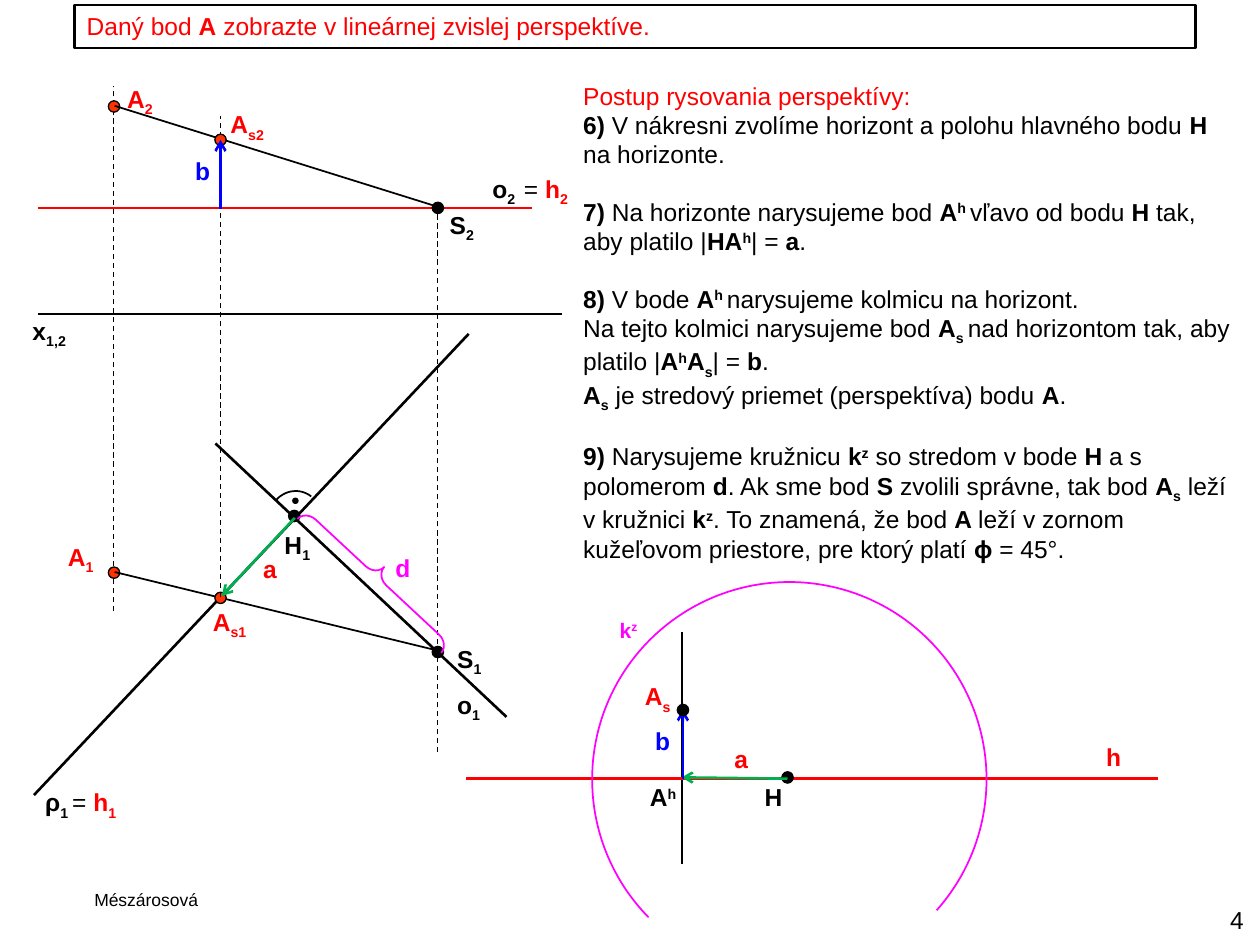
from dataclasses import dataclass
from typing import Any

from lxml import etree
from pptx import Presentation
from pptx.dml.color import RGBColor
from pptx.enum.dml import MSO_LINE
from pptx.enum.shapes import MSO_CONNECTOR, MSO_SHAPE
from pptx.enum.text import MSO_ANCHOR, MSO_AUTO_SIZE, PP_ALIGN
from pptx.oxml.ns import qn
from pptx.util import Inches, Pt

DASH = MSO_LINE.DASH
STRAIGHT = MSO_CONNECTOR.STRAIGHT
ELLIPSE, ARC, BRACE, RECTANGLE = (
    MSO_SHAPE.OVAL, MSO_SHAPE.ARC, MSO_SHAPE.LEFT_BRACE, MSO_SHAPE.RECTANGLE)
TOP, MIDDLE = MSO_ANCHOR.TOP, MSO_ANCHOR.MIDDLE
LEFT, RIGHT = PP_ALIGN.LEFT, PP_ALIGN.RIGHT
FIT = MSO_AUTO_SIZE.SHAPE_TO_FIT_TEXT

WIDTH, HEIGHT = Inches(10), Inches(7.5)
COLUMNS, ROWS = 100, 75
BLACK, RED, BLUE, GREEN, PINK, ORANGE = (
    "000000", "FF0000", "0000FF", "00B050", "FF00FF", "FF3300")
DOT_SIZE = 0.9
BASELINES = {"_": "-25000", "^": "30000"}


@dataclass(frozen=True)
class Segment:
    """A straight line; an arrow has its head at the start."""
    start: tuple[float, float]
    end: tuple[float, float]
    color: str = BLACK
    weight: float = 1
    dashed: bool = False
    arrow: bool = False


@dataclass(frozen=True)
class Dot:
    """A marked point, placed by its centre."""
    column: float
    row: float
    color: str = BLACK
    size: float = DOT_SIZE
    weight: float = 0.75


@dataclass(frozen=True)
class Outline:
    """An unfilled preset shape."""
    preset: Any
    box: tuple[float, float, float, float]
    adjustments: tuple[float, ...] = ()
    rotation: float = 0


@dataclass(frozen=True)
class Label:
    """Text where * toggles bold, ~ red, _ subscript and ^ superscript."""
    text: str
    box: tuple[float, float, float, float]
    color: str = BLACK
    size: float = 14
    wrap: bool = False
    align: Any = LEFT
    anchor: Any = TOP


DRAWING = (
    Segment((54.1, 50.2), (54.1, 68.6)),
    Segment((44.6, 24.9), (3, 24.9)),
    Segment((9, 48.5), (9, 6.8), weight=0.75, dashed=True),
    Segment((17.1, 35.2), (40.2, 56.9), weight=1.5),
    Segment((42.2, 16.5), (3, 16.5), RED, 1.5),
    Dot(34.75, 16.5),
    Dot(9.05, 8.45, ORANGE),
    Segment((34.7, 59.7), (34.7, 16.5), weight=0.75, dashed=True),
    Segment((2.7, 63.1), (37.2, 26.5), weight=1.5),
    Dot(23.35, 40.95),
    Dot(9.05, 45.45, ORANGE),
    Dot(34.75, 51.75),
    Segment((35, 51.7), (9.1, 45.4)),
    Dot(17.5, 47.45, ORANGE),
    Segment((34.7, 16.4), (9.1, 8.4)),
    Segment((17.5, 47.4), (17.5, 9.2), weight=0.75, dashed=True),
    Segment((91.9, 61.8), (37, 61.8), RED, 1.5),
    Dot(62.5, 61.7),
    Segment((17.6, 47.3), (23.4, 41.1), GREEN, 1.5, arrow=True),
    Segment((54.1, 61.7), (62.5, 61.8), GREEN, 1.5, arrow=True),
    Segment((54.2, 56.3), (54.2, 61.8), BLUE, 1.5, arrow=True),
    Outline(ARC, (47, 46.2, 31.3, 31.3), (81.33, 24.99)),
    Dot(54.2, 56.35),
    Outline(BRACE, (29, 38, 1.9, 15.6), (0.59, 0.51), 133),
    Dot(17.5, 11.1, ORANGE),
    Segment((17.5, 11.1), (17.5, 16.6), BLUE, 1.5, arrow=True),
    Dot(23.45, 39.75, size=0.3, weight=1.5),
)
RIGHT_ANGLE = ((21.9, 39.7), (22.6, 38.9), (23.8, 38.7), (24.7, 39.4))
TITLE = Label("Daný bod *A* zobrazte v lineárnej zvislej perspektíve.",
              (5.9, 0.4, 89, 3.4), RED, wrap=True)
LABELS = (
    Label("*A_2", (9.1, 6.2, 4.2, 3.4), RED),
    Label("*A_1", (4.4, 42.5, 4.2, 3.4), RED),
    Label("*x_1,2", (1.6, 24.6, 5, 3.4), wrap=True),
    Label("*o_1", (35.3, 54.3, 4.3, 3.7)),
    Label("*S_1", (35.3, 50.6, 4.5, 3.7)),
    Label("*o_2", (38.1, 13.3, 4.3, 3.7)),
    Label("*S_2", (34.7, 16.2, 4.5, 3.7)),
    Label("*H_1", (21.6, 41.6, 4.6, 3.7)),
    Label("= ~*h_2", (40.6, 13.3, 5.6, 3.4)),
    Label("*A_s1", (15.9, 47.7, 4.9, 3.4), RED),
    Label("*A_s2", (17.3, 8.2, 4.9, 3.4), RED),
    Label("*b", (14.5, 11.9, 3.2, 3.4), BLUE),
    Label("*a", (19.9, 43.5, 3.1, 3.4), RED),
    Label("*H", (59.7, 61.6, 3.8, 3.7)),
    Label("*h", (86.8, 58.4, 3.2, 3.4), RED),
    Label("*a", (57.3, 58.6, 3.1, 3.4), RED),
    Label("*b", (51, 57.1, 3.2, 3.4), BLUE),
    Label("*A^h", (50.6, 61.6, 4.2, 3.4)),
    Label("*k^z", (48.2, 48.5, 3.5, 3), PINK, 12),
    Label("*A_s", (50.2, 53.6, 4.2, 3.4), RED),
    Label("*d", (30.4, 43.4, 3.2, 3.4), PINK),
    Label("*ρ_1 _*= ~*h_1", (2.6, 62, 8, 3.4)),
    Label("Mészárosová", (6.5, 70.1, 10.3, 2.7), size=10),
    Label("4", (95.3, 71.3, 4.4, 3.4), align=RIGHT, anchor=MIDDLE),
)
PROCEDURE = Label(
    "~Postup rysovania perspektívy:\n"
    "*6) *V nákresni zvolíme horizont a polohu hlavného bodu *H* na horizonte.\n"
    "*7) *Na horizonte narysujeme bod *A^h ^*vľavo od bodu *H *tak, "
    "aby platilo |*HA^h^*| = *a*.\n"
    "*8) *V bode *A^h ^*narysujeme kolmicu na horizont.\n"
    "Na tejto kolmici narysujeme bod *A_s _*nad horizontom tak, aby\n"
    "platilo |*A^h^A_s_*| = *b*.\n"
    "*A_s_* je stredový priemet (perspektíva) bodu *A*.\n"
    "*9) *Narysujeme kružnicu *k^z^* so stredom v bode *H *a s polomerom *d*. "
    "Ak sme bod *S *zvolili správne, tak bod *A_s_* leží v kružnici *k^z^*. "
    "To znamená, že bod *A *leží v zornom\n"
    "kužeľovom priestore, pre ktorý platí *ϕ *= 45°.",
    (45.3, 5.9, 53.5, 38.7), wrap=True)
STEP_STARTS = ("*7)", "*8)", "*9)")


def rgb(color: str) -> RGBColor:
    """Turn a hex string into a colour."""
    return RGBColor.from_string(color)


def place(*lengths: float) -> list[int]:
    """Turn alternating columns and rows into slide lengths."""
    units = (WIDTH / COLUMNS, HEIGHT / ROWS)
    return [round(length * units[index % 2]) for index, length in enumerate(lengths)]


def apply_format(target: Any, values: dict[str, Any]) -> None:
    """Set every named value on the target."""
    for name, value in values.items():
        setattr(target, name, value)


def style_line(shape: Any, color: str, weight: float) -> None:
    """Give a shape its line colour and width."""
    shape.line.color.rgb = rgb(color)
    shape.line.width = Pt(weight)


def draw_segment(slide: Any, segment: Segment) -> None:
    """Draw a line, dashed or with an arrowhead if asked."""
    connector = slide.shapes.add_connector(STRAIGHT, *place(*segment.start, *segment.end))
    style_line(connector, segment.color, segment.weight)
    if segment.dashed:
        connector.line.dash_style = DASH
    if segment.arrow:
        etree.SubElement(connector.line._get_or_add_ln(), qn("a:headEnd"), type="arrow")
    etree.SubElement(connector._element.spPr, qn("a:effectLst"))


def draw_dot(slide: Any, dot: Dot) -> None:
    """Draw a filled circle around its centre."""
    half = dot.size / 2
    box = place(dot.column - half, dot.row - half, dot.size, dot.size)
    shape = slide.shapes.add_shape(ELLIPSE, *box)
    shape.shadow.inherit = False
    shape.fill.solid()
    shape.fill.fore_color.rgb = rgb(dot.color)
    style_line(shape, BLACK, dot.weight)


def draw_outline(slide: Any, outline: Outline) -> None:
    """Draw an unfilled pink shape."""
    shape = slide.shapes.add_shape(outline.preset, *place(*outline.box))
    for index, value in enumerate(outline.adjustments):
        shape.adjustments[index] = value
    apply_format(shape, {"rotation": outline.rotation})
    shape.shadow.inherit = False
    shape.fill.background()
    style_line(shape, PINK, 1)


def draw_right_angle(slide: Any, steps: int = 16) -> None:
    """Draw the right-angle mark along a cubic curve."""
    points = []
    for step in range(steps + 1):
        t = step / steps
        weights = ((1 - t) ** 3, 3 * t * (1 - t) ** 2, 3 * t * t * (1 - t), t ** 3)
        points.append(place(*(sum(w * point[axis] for w, point in zip(weights, RIGHT_ANGLE))
                              for axis in range(2))))
    builder = slide.shapes.build_freeform(*points[0])
    builder.add_line_segments(points[1:], close=False)
    shape = builder.convert_to_shape()
    shape.shadow.inherit = False
    shape.fill.background()
    style_line(shape, BLACK, 1)


def add_runs(paragraph: Any, text: str, label: Label) -> None:
    """Split marked text at its toggles and add the runs."""
    active: set[str] = set()
    pending = ""
    for character in text + "*":
        if character not in "*~_^":
            pending += character
            continue
        if pending:
            run = paragraph.add_run()
            run.text = pending
            apply_format(run.font, {"name": "Arial", "size": Pt(label.size), "bold": "*" in active})
            run.font.color.rgb = rgb(RED if "~" in active else label.color)
            for mark in active & BASELINES.keys():
                run._r.get_or_add_rPr().set("baseline", BASELINES[mark])
        pending = ""
        active ^= {character}


def write_text(shape: Any, label: Label) -> None:
    """Fill a shape with the paragraphs of a label."""
    frame = shape.text_frame
    apply_format(frame, {"word_wrap": label.wrap, "auto_size": FIT, "vertical_anchor": label.anchor})
    for index, text in enumerate(label.text.split("\n")):
        paragraph = frame.add_paragraph() if index else frame.paragraphs[0]
        paragraph.alignment = label.align
        if text.startswith(STEP_STARTS):
            paragraph.space_before = Pt(16)
        add_runs(paragraph, text, label)


def draw_title(slide: Any) -> None:
    """Draw the framed task at the top."""
    shape = slide.shapes.add_shape(RECTANGLE, *place(*TITLE.box))
    shape.shadow.inherit = False
    shape.fill.background()
    style_line(shape, BLACK, 1.5)
    write_text(shape, TITLE)


def main() -> None:
    """Build and save the slide."""
    presentation = Presentation()
    apply_format(presentation, {"slide_width": WIDTH, "slide_height": HEIGHT})
    slide = presentation.slides.add_slide(presentation.slide_layouts[6])
    draw = {Segment: draw_segment, Dot: draw_dot, Outline: draw_outline}
    for item in DRAWING:
        draw[type(item)](slide, item)
    draw_right_angle(slide)
    draw_title(slide)
    for label in (*LABELS, PROCEDURE):
        write_text(slide.shapes.add_textbox(*place(*label.box)), label)
    presentation.save("out.pptx")


if __name__ == "__main__":
    main()
